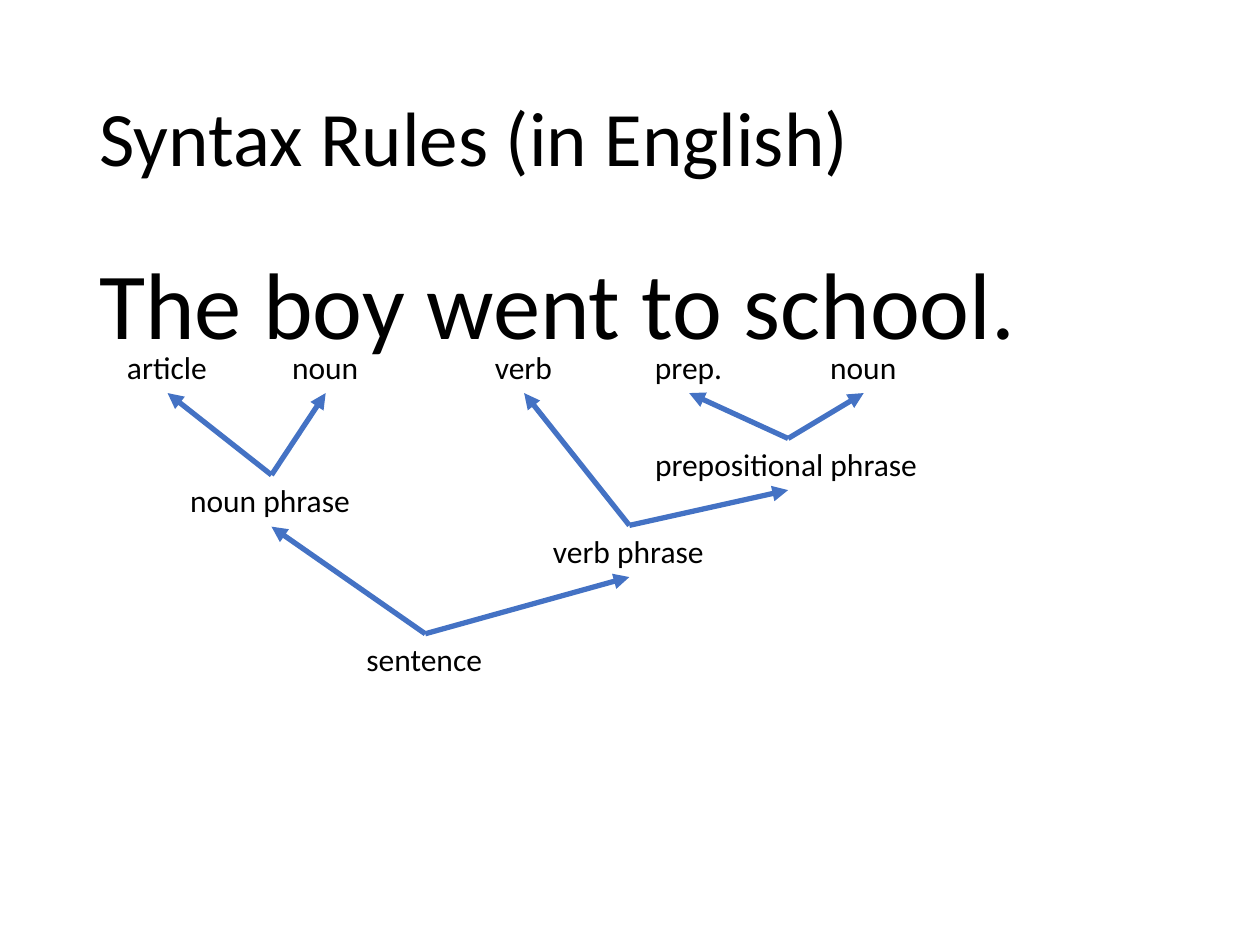
"""Build a slide with the syntax tree of an English sentence."""
from pptx import Presentation
from pptx.dml.color import RGBColor
from pptx.enum import shapes, text
from pptx.oxml import xmlchemy
from pptx.util import Inches, Pt

BLACK = RGBColor(0x00, 0x00, 0x00)
BLUE = RGBColor(0x44, 0x72, 0xC4)
TOP_SITE, BOTTOM_SITE = 0, 2
LABEL_HEIGHT = 0.41
WORD_ROW = 2.71

deck = Presentation()
deck.slide_width, deck.slide_height = Inches(10), Inches(7.5)
slide = deck.slides.add_slide(deck.slide_layouts[6])


def add_text(wording, left, top, width, height, size):
    box = slide.shapes.add_textbox(Inches(left), Inches(top), Inches(width), Inches(height))
    box.text_frame.text = wording
    font = box.text_frame.paragraphs[0].runs[0].font
    font.name, font.size, font.color.rgb = "Calibri", Pt(size), BLACK
    return box


title = add_text("Syntax Rules (in English)", 0.69, 0.4, 8.62, 1.45, 44)
title.text_frame.vertical_anchor = text.MSO_ANCHOR.MIDDLE
example = add_text("The boy went to school.", 0.69, 2, 8.62, 4.76, 54)
example.text_frame.paragraphs[0].space_before = Pt(10)
for heading in (title, example):
    heading.text_frame.word_wrap = True
    heading.text_frame.paragraphs[0].line_spacing = 0.9

labels = {
    "article": ("article", 0.91, WORD_ROW, 0.84),
    "subject": ("noun", 2.22, WORD_ROW, 0.73),
    "verb": ("verb", 3.83, WORD_ROW, 0.66),
    "preposition": ("prep.", 5.1, WORD_ROW, 0.74),
    "place": ("noun", 6.49, WORD_ROW, 0.73),
    "noun phrase": ("noun phrase", 1.41, 3.77, 1.49),
    "prepositional phrase": ("prepositional phrase", 5.1, 3.48, 2.31),
    "verb phrase": ("verb phrase", 4.29, 4.17, 1.41),
    "sentence": ("sentence", 2.81, 5.03, 1.13),
}
nodes = {}
for key, (wording, left, top, width) in labels.items():
    nodes[key] = add_text(wording, left, top, width, LABEL_HEIGHT, 18)
    nodes[key].text_frame.word_wrap = False
    nodes[key].text_frame.auto_size = text.MSO_AUTO_SIZE.SHAPE_TO_FIT_TEXT

branches = {
    "noun phrase": ("article", "subject"),
    "prepositional phrase": ("preposition", "place"),
    "verb phrase": ("prepositional phrase", "verb"),
    "sentence": ("noun phrase", "verb phrase"),
}
for parent, children in branches.items():
    for child in children:
        arrow = slide.shapes.add_connector(shapes.MSO_CONNECTOR.STRAIGHT, 0, 0, 0, 0)
        arrow.begin_connect(nodes[parent], TOP_SITE)
        arrow.end_connect(nodes[child], BOTTOM_SITE)
        arrow.line.color.rgb = BLUE
        arrow.line.width = Pt(3)
        outline = arrow.line._get_or_add_ln()
        outline.append(xmlchemy.OxmlElement("a:tailEnd"))
        outline[-1].set("type", "triangle")
        arrow._element.spPr.append(xmlchemy.OxmlElement("a:effectLst"))

deck.save("out.pptx")
